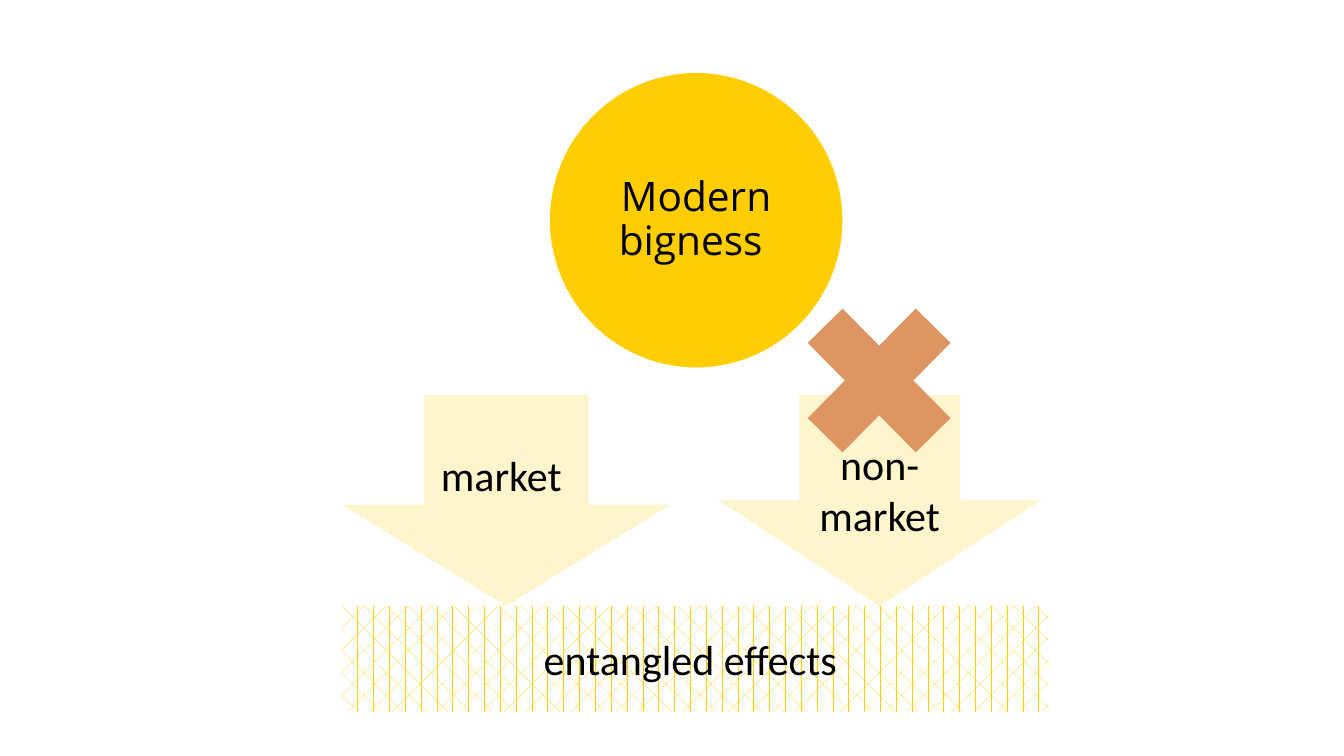
"""Build the slide on modern bigness and its entangled effects."""
from dataclasses import dataclass

from pptx import Presentation
from pptx.dml.color import RGBColor
from pptx.enum import dml, shapes, text
from pptx.util import Inches, Pt


@dataclass(frozen=True)
class Theme:
    """Colours, fonts and type sizes of the slide."""
    gold: RGBColor = RGBColor.from_string("FFCD00")
    cream: RGBColor = RGBColor.from_string("FFF5CC")
    orange: RGBColor = RGBColor.from_string("DD9562")
    white: RGBColor = RGBColor.from_string("FFFFFF")
    black: RGBColor = RGBColor.from_string("000000")
    body_font: str = "Calibri"
    circle_font: str = "Open Sans"
    body_size: int = 30
    circle_size: int = 29


THEME = Theme()


def add_shape(slide, kind, left, top, width, height, color):
    """Add a flat shape without an outline."""
    shape = slide.shapes.add_shape(
        kind, Inches(left), Inches(top), Inches(width), Inches(height))
    shape.shadow.inherit = False
    shape.fill.solid()
    shape.fill.fore_color.rgb = color
    shape.line.fill.background()
    return shape


def add_label(shape, label, font=THEME.body_font, size=THEME.body_size):
    """Write a centred label in a shape and return its text frame."""
    frame = shape.text_frame
    frame.text = label
    frame.word_wrap = True
    frame.vertical_anchor = text.MSO_ANCHOR.MIDDLE
    paragraph = frame.paragraphs[0]
    paragraph.alignment = text.PP_ALIGN.CENTER
    for run in paragraph.runs:
        run.font.name = font
        run.font.size = Pt(size)
        run.font.color.rgb = THEME.black
    return frame


def add_arrow(slide, left, width, label, head=0.5):
    """Add a labelled down arrow that ends on the effects bar."""
    arrow = add_shape(slide, shapes.MSO_SHAPE.DOWN_ARROW,
                      left, 3.92, width, 2.09, THEME.cream)
    arrow.adjustments[0] = 0.5
    arrow.adjustments[1] = head
    return add_label(arrow, label)


def add_circle(slide):
    """Add the circle that names the theme."""
    circle = add_shape(slide, shapes.MSO_SHAPE.OVAL,
                       5.44, 0.71, 2.93, 2.95, THEME.gold)
    circle.line.color.rgb = THEME.white
    circle.line.width = Pt(2)
    frame = add_label(circle, "Modern bigness ",
                      THEME.circle_font, THEME.circle_size)
    frame.paragraphs[0].line_spacing = 0.9
    frame.margin_left = frame.margin_right = Inches(0.02)
    frame.margin_top = frame.margin_bottom = Inches(0.02)


def add_effects_bar(slide):
    """Add the patterned bar below the arrows."""
    bar = add_shape(slide, shapes.MSO_SHAPE.RECTANGLE,
                    3.39, 6.01, 7.01, 1.05, THEME.white)
    bar.fill.patterned()
    bar.fill.pattern = dml.MSO_PATTERN.DIVOT
    bar.fill.fore_color.rgb = THEME.gold
    bar.fill.back_color.rgb = THEME.white
    add_label(bar, "entangled effects ")


def main():
    """Build and save the presentation."""
    presentation = Presentation()
    presentation.slide_width = Inches(13.33)
    presentation.slide_height = Inches(7.5)
    slide = presentation.slides.add_slide(presentation.slide_layouts[6])
    add_arrow(slide, 3.39, 3.26, "market ", head=0.48)
    add_arrow(slide, 7.13, 3.19, "non-market").margin_top = Inches(0.35)
    add_circle(slide)
    add_shape(slide, shapes.MSO_SHAPE.MATH_MULTIPLY,
              7.69, 2.73, 2.06, 2.09, THEME.orange)
    add_effects_bar(slide)
    presentation.save("out.pptx")


if __name__ == "__main__":
    main()
